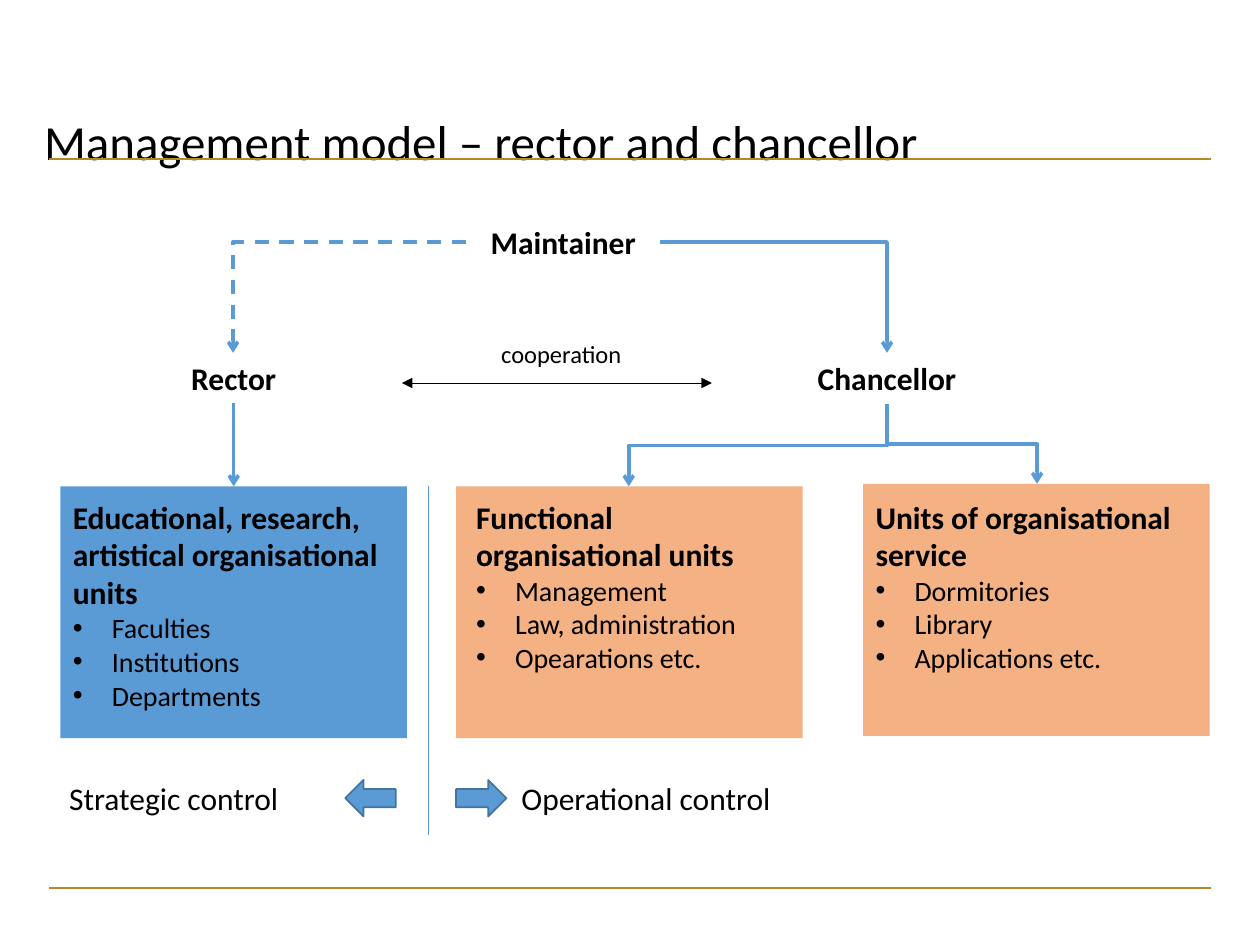
from pptx import Presentation
from pptx.dml.color import RGBColor
from pptx.enum.dml import MSO_LINE
from pptx.enum.shapes import MSO_CONNECTOR, MSO_SHAPE
from pptx.enum.text import MSO_ANCHOR, PP_ALIGN
from pptx.util import Inches, Pt
from lxml.etree import SubElement
from pptx.oxml.ns import qn

BLUE, PEACH, GOLD, BLACK = "5B9BD5", "F4B183", "B78727", "000000"
LEFT, MID = PP_ALIGN.LEFT, PP_ALIGN.CENTER
color = RGBColor.from_string

deck = Presentation()
deck.slide_width, deck.slide_height = Inches(10), Inches(7.5)
slide = deck.slides.add_slide(deck.slide_layouts[5])
shapes = slide.shapes


def write(par, text, size, bold=False, align=LEFT):
    par.alignment = align
    run = par.add_run()
    run.text = text
    font = run.font
    font.name, font.size, font.bold = "Calibri", Pt(size), bold
    font.color.rgb = color(BLACK)


def link(start, end, hue, width, ends=(), kind=MSO_CONNECTOR.STRAIGHT):
    line = shapes.add_connector(kind, *[Inches(v) for v in start + end])
    line.line.color.rgb = color(hue)
    line.line.width = Pt(width)
    for tag, tip in ends:
        SubElement(line.line._get_or_add_ln(), qn(tag)).set("type", tip)
    SubElement(line._element.spPr, qn("a:effectLst"))
    return line


# Rules above and below the content
for y in (1.26, 7.05):
    link((0.39, y), (9.61, y), GOLD, 1)

# Title
title = shapes.title
title.left, title.top = Inches(0.25), Inches(0.8)
title.width, title.height = Inches(7.81), Inches(0.69)
title.text_frame.vertical_anchor = MSO_ANCHOR.MIDDLE
head = title.text_frame.paragraphs[0]
head.line_spacing = 0.9
write(head, "Management model – rector and chancellor", 28)

# Unit boxes with their lists: box left, top, fill, text left, width, words
units = [
    (6.85, 3.84, PEACH, 6.85, 2.75, "Units of organisational service",
     ["Dormitories", "Library", "Applications etc."]),
    (3.62, 3.86, PEACH, 3.68, 2.68, "Functional organisational units",
     ["Management", "Law, administration", "Opearations etc."]),
    (0.48, 3.86, BLUE, 0.48, 2.75,
     "Educational, research, artistical organisational units",
     ["Faculties", "Institutions", "Departments"]),
]
for x, y, fill, left, width, name, items in units:
    box = shapes.add_shape(MSO_SHAPE.RECTANGLE, Inches(x), Inches(y),
                           Inches(2.75), Inches(2))
    box.shadow.inherit = False
    box.fill.solid()
    box.fill.fore_color.rgb = color(fill)
    box.line.fill.background()
    text = shapes.add_textbox(Inches(left), Inches(3.9), Inches(width),
                              Inches(1.82)).text_frame
    text.word_wrap = True
    write(text.paragraphs[0], name, 18, True)
    for item in items:
        par = text.add_paragraph()
        props = par._p.get_or_add_pPr()
        props.set("marL", str(Inches(0.31)))
        props.set("indent", str(-Inches(0.31)))
        SubElement(props, qn("a:buFont")).set("typeface", "Arial")
        SubElement(props, qn("a:buChar")).set("char", "•")
        write(par, item, 16)
faculty = box  # the last box drawn stands below the rector

# Labels
labels = [
    ("Maintainer", 3.7, 1.72, 1.54, 18, True, MID),
    ("Chancellor", 5.85, 2.8, 2.38, 18, True, MID),
    ("cooperation", 3.68, 2.64, 1.55, 14, False, MID),
    ("Operational control", 4.04, 6.13, 2.52, 18, False, LEFT),
    ("Strategic control", 0.45, 6.13, 2.29, 18, False, LEFT),
    ("Rector", 1.13, 2.8, 1.45, 18, True, MID),
]
for words, x, y, width, size, bold, align in labels:
    label = shapes.add_textbox(Inches(x), Inches(y), Inches(width),
                               Inches(0.4))
    label.text_frame.word_wrap = True
    write(label.text_frame.paragraphs[0], words, size, bold, align)
rector = label

# Straight links: cooperation, divider, rector to faculties
link((3.19, 3.04), (5.65, 3.04), BLACK, 0.5,
     [("a:headEnd", "triangle"), ("a:tailEnd", "triangle")])
link((3.4, 3.86), (3.4, 6.63), BLUE, 0.5)
tip = [("a:tailEnd", "arrow")]
down = link((1.85, 3.2), (1.85, 3.86), BLUE, 2, tip)
down.begin_connect(rector, 2)
down.end_connect(faculty, 0)

# Maintainer to rector (dashed) and chancellor: across, then down
for x, end, dash in ((3.7, 1.85, MSO_LINE.DASH), (5.24, 7.04, None)):
    bend = link((x, 1.92), (end, 2.8), BLUE, 2, tip, MSO_CONNECTOR.ELBOW)
    bend._element.spPr.prstGeom.set("prst", "bentConnector2")
    bend.line.dash_style = dash

# Chancellor to its units: down, across, down, so the elbow is turned
for x, y, turn, flip in ((4.99, 3.86, 90, "0"), (8.23, 3.84, 270, "1")):
    top = 3.21
    mid_x, mid_y = (7.04 + x) / 2, (top + y) / 2
    long, wide = y - top, abs(x - 7.04)
    bend = link((mid_x - long / 2, mid_y - wide / 2),
                (mid_x + long / 2, mid_y + wide / 2),
                BLUE, 2, tip, MSO_CONNECTOR.ELBOW)
    frame = bend._element.spPr.xfrm
    frame.set("rot", str(turn * 60000))
    frame.set("flipH", flip)

# Block arrows for the two kinds of control
for x, turn in ((3.62, 0), (2.74, 180)):
    arrow = shapes.add_shape(MSO_SHAPE.RIGHT_ARROW, Inches(x), Inches(6.19),
                             Inches(0.4), Inches(0.29))
    arrow.rotation = turn
    arrow.shadow.inherit = False
    arrow.fill.solid()
    arrow.fill.fore_color.rgb = color(BLUE)
    arrow.line.color.rgb = color("43739E")
    arrow.line.width = Pt(1)

deck.save("out.pptx")
